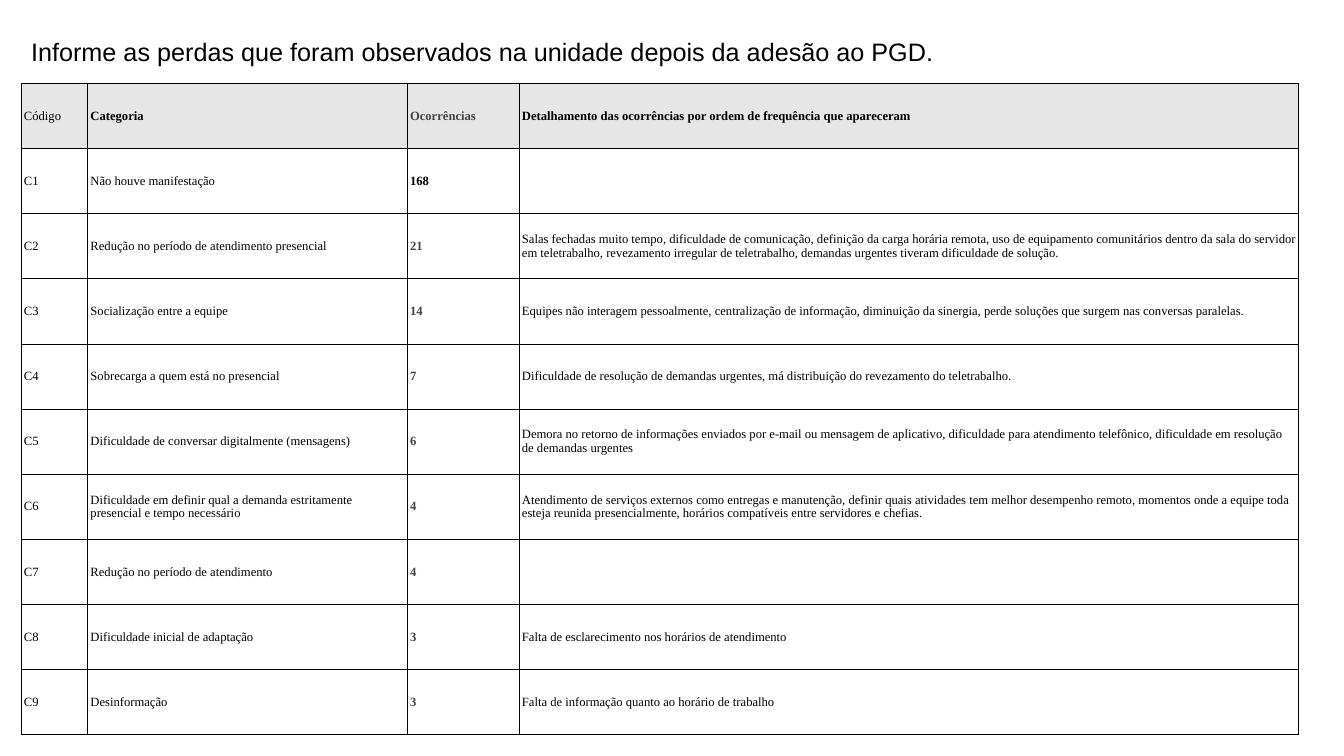
from lxml.etree import SubElement
from pptx import Presentation
from pptx.dml.color import RGBColor
from pptx.enum.text import MSO_ANCHOR, MSO_AUTO_SIZE
from pptx.oxml.ns import qn
from pptx.util import Inches, Pt

BLACK = RGBColor(0x00, 0x00, 0x00)
DARK_GRAY = RGBColor(0x43, 0x43, 0x43)
LIGHT_GRAY = RGBColor(0xE7, 0xE6, 0xE6)
WHITE = RGBColor(0xFF, 0xFF, 0xFF)

TITLE = "Informe as perdas que foram observados na unidade depois da adesão ao PGD."
HEADER = ("Código", "Categoria", "Ocorrências",
          "Detalhamento das ocorrências por ordem de frequência que apareceram")
# Category, occurrences, details; the codes C1 to C9 follow the row number
LOSSES = [
    ("Não houve manifestação", 168, ""),
    ("Redução no período de atendimento presencial", 21,
     "Salas fechadas muito tempo, dificuldade de comunicação, definição da carga "
     "horária remota, uso de equipamento comunitários dentro da sala do servidor em "
     "teletrabalho, revezamento irregular de teletrabalho, demandas urgentes tiveram "
     "dificuldade de solução."),
    ("Socialização entre a equipe", 14,
     "Equipes não interagem pessoalmente, centralização de informação, diminuição da "
     "sinergia, perde soluções que surgem nas conversas paralelas."),
    ("Sobrecarga a quem está no presencial", 7,
     "Dificuldade de resolução de demandas urgentes, má distribuição do revezamento "
     "do teletrabalho."),
    ("Dificuldade de conversar digitalmente (mensagens)", 6,
     "Demora no retorno de informações enviados por e-mail ou mensagem de aplicativo, "
     "dificuldade para atendimento telefônico, dificuldade em resolução de demandas "
     "urgentes"),
    ("Dificuldade em definir qual a demanda estritamente presencial e tempo necessário", 4,
     "Atendimento de serviços externos como entregas e manutenção, definir quais "
     "atividades tem melhor desempenho remoto, momentos onde a equipe toda esteja "
     "reunida presencialmente, horários compatíveis entre servidores e chefias."),
    ("Redução no período de atendimento", 4, ""),
    ("Dificuldade inicial de adaptação", 3,
     "Falta de esclarecimento nos horários de atendimento"),
    ("Desinformação", 3, "Falta de informação quanto ao horário de trabalho"),
]
COLUMN_WIDTHS = (0.66, 3.17, 1.11, 7.73)
LEFT = 0.21
TABLE_TOP, TABLE_HEIGHT = 0.83, 6.46
OCCURRENCES = 2


def add_text(para, text, font_name, size, color, bold=False):
    span = para.add_run()
    span.text = text
    span.font.name = font_name
    span.font.size = Pt(size)
    span.font.bold = bold
    span.font.color.rgb = color


def add_borders(cell):
    properties = cell._tc.get_or_add_tcPr()
    for side in ("lnL", "lnR", "lnT", "lnB"):
        line = SubElement(properties, qn(f"a:{side}"), w=str(Pt(0.75)))
        fill = SubElement(line, qn("a:solidFill"))
        SubElement(fill, qn("a:srgbClr"), val=str(BLACK))


deck = Presentation()
deck.slide_width = Inches(13.33)
deck.slide_height = Inches(7.5)
page = deck.slides.add_slide(deck.slide_layouts[6])

# Title
box = page.shapes.add_textbox(Inches(LEFT), Inches(0.31), Inches(12.91), Inches(0.4))
box.text_frame.word_wrap = True
box.text_frame.auto_size = MSO_AUTO_SIZE.SHAPE_TO_FIT_TEXT
add_text(box.text_frame.paragraphs[0], TITLE, "Arial", 18, BLACK)

# Table grid: equal rows, fixed columns
rows = [HEADER] + [(f"C{number}", category, str(count), details)
                   for number, (category, count, details) in enumerate(LOSSES, 1)]
table = page.shapes.add_table(
    len(rows), len(HEADER), Inches(LEFT), Inches(TABLE_TOP),
    Inches(sum(COLUMN_WIDTHS)), Inches(TABLE_HEIGHT)).table
for column, width in zip(table.columns, COLUMN_WIDTHS):
    column.width = Inches(width)

# Cells
for row_index, row in enumerate(rows):
    is_header = row_index == 0
    for column_index, text in enumerate(row):
        cell = table.cell(row_index, column_index)
        add_borders(cell)
        cell.fill.solid()
        cell.fill.fore_color.rgb = LIGHT_GRAY if is_header else WHITE
        cell.vertical_anchor = MSO_ANCHOR.MIDDLE
        cell.margin_left = cell.margin_right = Pt(2)
        cell.margin_top = cell.margin_bottom = Inches(0.02)
        if not text:
            continue
        is_count = column_index == OCCURRENCES
        bold = is_count or (is_header and column_index > 0)
        color = DARK_GRAY if is_count and row_index != 1 else BLACK
        add_text(cell.text_frame.paragraphs[0], text, "Times New Roman", 9, color, bold)

deck.save("out.pptx")
